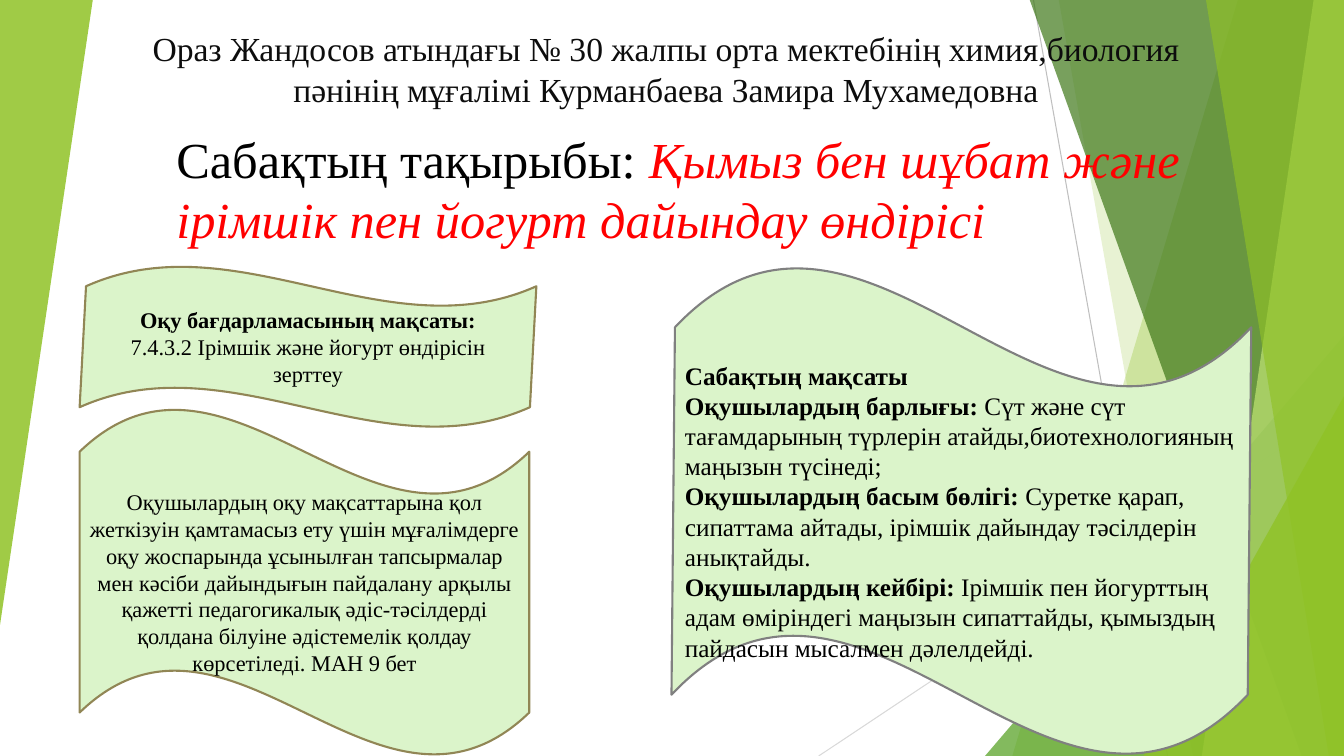
import dataclasses
import typing

import lxml.etree
import pptx
import pptx.dml.color
import pptx.enum.shapes
import pptx.enum.text
import pptx.oxml.ns
import pptx.util

Inches = pptx.util.Inches
Align = pptx.enum.text.PP_ALIGN
Anchor = pptx.enum.text.MSO_ANCHOR
AutoSize = pptx.enum.text.MSO_AUTO_SIZE
Preset = pptx.enum.shapes.MSO_SHAPE

WIDTH, HEIGHT = 13.33, 7.5
STRIP_TOP = -0.01
FONT = "Times New Roman"
LIGHT_GREEN, OLIVE, GREY = "DBF4CA", "918655", "808080"


class Box(typing.NamedTuple):
    left: float
    top: float
    width: float
    height: float


class Run(typing.NamedTuple):
    text: str
    bold: bool = False
    italic: bool = False
    color: str = "000000"
    break_after: bool = False


@dataclasses.dataclass
class Strip:
    top_left: float
    bottom_left: float
    color: str
    opacity: int


@dataclasses.dataclass
class Triangle:
    box: Box
    color: str
    opacity: int
    rotation: int = 0


@dataclasses.dataclass
class Wave:
    box: Box
    shift: float
    outline: str
    size: int
    alignment: Align
    paragraphs: list[list[Run]]


RAYS = [
    ((10.25, 0), (11.58, HEIGHT), "BFBFBF"),
    ((WIDTH, 4.03), (8.12, HEIGHT), "D9D9D9"),
]

FACETS = [
    Strip(12.28, 10.04, "90C226", 30),
    Strip(10.5, 11.83, "90C226", 20),
    Triangle(Box(9.77, 3.33, 3.56, 4.17), "54A021", 72),
    Strip(10.21, 12.91, "3F7819", 70),
    Strip(13.03, 11.92, "C0E474", 70),
    Strip(11.96, 13.18, "90C226", 65),
    Triangle(Box(11.34, 3.93, 1.99, 3.57), "90C226", 80),
    Triangle(Box(0, 0, 0.92, 6.2), "90C226", 85, 180),
]

TEACHER = [[Run(
    "Ораз Жандосов атындағы № 30 жалпы орта мектебінің химия,биология "
    "пәнінің мұғалімі Курманбаева Замира Мухамедовна", color="0D0D0D")]]

TOPIC = [[
    Run("Сабақтың тақырыбы: "),
    Run("Қымыз бен шұбат және ірімшік пен йогурт дайындау өндірісі",
        italic=True, color="FF0000"),
]]

PROGRAMME_GOAL = Wave(
    Box(0.79, 2.64, 4.53, 1.6), -0.007, OLIVE, 16, Align.CENTER,
    [[
        Run("Оқу бағдарламасының мақсаты:", bold=True, break_after=True),
        Run("7.4.3.2 Ірімшік және йогурт өндірісін зерттеу"),
    ]])

TEACHER_SUPPORT = Wave(
    Box(0.79, 4.05, 4.46, 3.45), 0, OLIVE, 16, Align.CENTER,
    [[Run(
        "Оқушылардың оқу мақсаттарына қол жеткізуін қамтамасыз ету үшін "
        "мұғалімдерге оқу жоспарында ұсынылған тапсырмалар мен кәсіби "
        "дайындығын пайдалану арқылы қажетті педагогикалық әдіс-тәсілдерді "
        "қолдана білуіне әдістемелік қолдау көрсетіледі. МАН 9 бет")]])

LESSON_GOALS = Wave(
    Box(6.66, 2.64, 5.75, 4.86), -0.003, GREY, 18, Align.LEFT,
    [
        [Run("Сабақтың мақсаты", bold=True)],
        [Run("Оқушылардың барлығы: ", bold=True),
         Run("Сүт және сүт тағамдарының түрлерін атайды,биотехнологияның "
             "маңызын түсінеді;")],
        [Run("Оқушылардың басым бөлігі: ", bold=True),
         Run("Суретке қарап, сипаттама айтады, ірімшік дайындау тәсілдерін "
             "анықтайды.")],
        [Run("Оқушылардың кейбірі: ", bold=True),
         Run("Ірімшік пен йогурттың адам өміріндегі маңызын сипаттайды, "
             "қымыздың пайдасын мысалмен дәлелдейді.")],
    ])


def rgb(color: str) -> pptx.dml.color.RGBColor:
    return pptx.dml.color.RGBColor.from_string(color)


def emu(box: Box) -> list[int]:
    return [Inches(length) for length in box]


def write(frame, paragraphs: list[list[Run]], size: int, alignment: Align,
          anchor: Anchor, auto_size: AutoSize = AutoSize.NONE) -> None:
    frame.word_wrap = True
    frame.auto_size = auto_size
    frame.vertical_anchor = anchor
    for index, runs in enumerate(paragraphs):
        paragraph = frame.add_paragraph() if index else frame.paragraphs[0]
        paragraph.alignment = alignment
        for item in runs:
            run = paragraph.add_run()
            run.text = item.text
            run.font.name = FONT
            run.font.size = pptx.util.Pt(size)
            run.font.bold = item.bold
            run.font.italic = item.italic
            run.font.color.rgb = rgb(item.color)
            if item.break_after:
                paragraph.add_line_break()


def draw_ray(slide, start: tuple, end: tuple, color: str) -> None:
    connector = slide.shapes.add_connector(
        pptx.enum.shapes.MSO_CONNECTOR.STRAIGHT,
        *(Inches(length) for length in start + end))
    connector.line.color.rgb = rgb(color)
    connector.line.width = pptx.util.Pt(0.75)
    lxml.etree.SubElement(connector._element.spPr,
                          pptx.oxml.ns.qn("a:effectLst"))


def draw_facet(slide, facet: Strip | Triangle) -> None:
    if isinstance(facet, Strip):
        builder = slide.shapes.build_freeform(
            Inches(facet.top_left), Inches(STRIP_TOP))
        corners = [(WIDTH, STRIP_TOP), (WIDTH, HEIGHT),
                   (facet.bottom_left, HEIGHT)]
        builder.add_line_segments(
            [(Inches(x), Inches(y)) for x, y in corners], close=True)
        shape = builder.convert_to_shape()
    else:
        shape = slide.shapes.add_shape(
            Preset.ISOSCELES_TRIANGLE, *emu(facet.box))
        shape.adjustments[0] = 1
        shape.rotation = facet.rotation
    shape.shadow.inherit = False
    shape.line.fill.background()
    shape.fill.solid()
    shape.fill.fore_color.rgb = rgb(facet.color)
    color = shape._element.spPr.find(".//" + pptx.oxml.ns.qn("a:srgbClr"))
    alpha = lxml.etree.SubElement(color, pptx.oxml.ns.qn("a:alpha"))
    alpha.set("val", str(facet.opacity * 1000))


def draw_wave(slide, wave: Wave) -> None:
    shape = slide.shapes.add_shape(Preset.WAVE, *emu(wave.box))
    shape.adjustments[0] = 0.125
    shape.adjustments[1] = wave.shift
    shape.shadow.inherit = False
    shape.fill.solid()
    shape.fill.fore_color.rgb = rgb(LIGHT_GREEN)
    shape.line.color.rgb = rgb(wave.outline)
    shape.line.width = pptx.util.Pt(1.5)
    write(shape.text_frame, wave.paragraphs, wave.size, wave.alignment,
          Anchor.MIDDLE)


def main() -> None:
    presentation = pptx.Presentation()
    presentation.slide_width = Inches(WIDTH)
    presentation.slide_height = Inches(HEIGHT)
    slide = presentation.slides.add_slide(presentation.slide_layouts[5])

    for start, end, color in RAYS:
        draw_ray(slide, start, end, color)
    for facet in FACETS:
        draw_facet(slide, facet)

    title = slide.shapes.title
    title.left, title.top, title.width, title.height = emu(
        Box(0.94, 0.17, 11.33, 0.96))
    write(title.text_frame, TEACHER, 24, Align.CENTER, Anchor.BOTTOM)
    slide.shapes.element.append(title._element)

    draw_wave(slide, PROGRAMME_GOAL)
    topic = slide.shapes.add_textbox(*emu(Box(1.65, 1.22, 10.62, 1.31)))
    write(topic.text_frame, TOPIC, 36, Align.LEFT, Anchor.TOP,
          AutoSize.SHAPE_TO_FIT_TEXT)
    draw_wave(slide, TEACHER_SUPPORT)
    draw_wave(slide, LESSON_GOALS)

    presentation.save("out.pptx")


if __name__ == "__main__":
    main()
